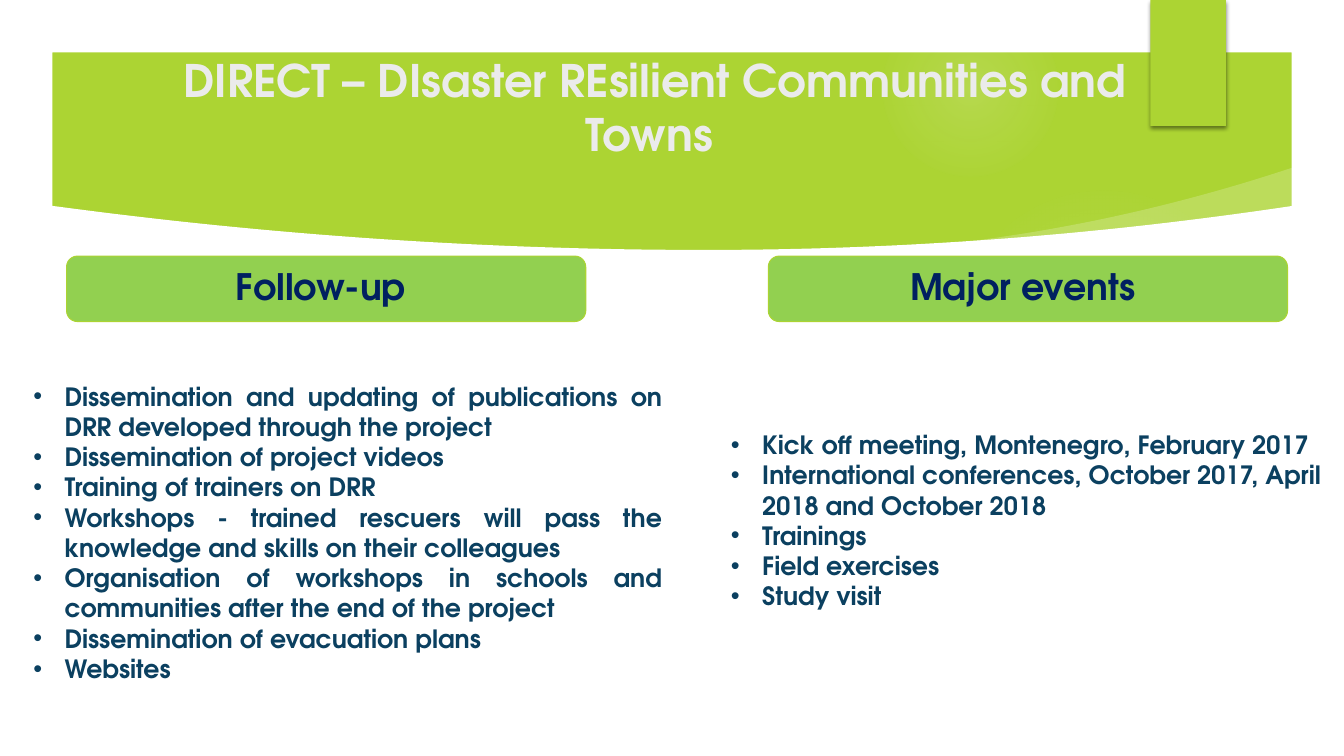
from lxml import etree
from pptx import Presentation
from pptx.dml.color import RGBColor
from pptx.enum import shapes, text
from pptx.oxml import parse_xml
from pptx.oxml.ns import nsdecls, qn
from pptx.util import Inches, Pt

FONT = "TeX Gyre Adventor"
LIME = RGBColor(0xAC, 0xD4, 0x33)
GREEN = RGBColor(0x92, 0xD0, 0x50)
NAVY = RGBColor(0x00, 0x20, 0x60)
TEAL = RGBColor(0x0B, 0x40, 0x60)
PALE = RGBColor(0xEB, 0xEB, 0xEB)
WHITE = RGBColor(0xFF, 0xFF, 0xFF)
GLOW = RGBColor(0xF7, 0xF7, 0xF7)

FOLLOW_UP = [
    "Dissemination and updating of publications on DRR developed through the project",
    "Dissemination of project videos",
    "Training of trainers on DRR",
    "Workshops - trained rescuers will pass the knowledge and skills on their colleagues",
    "Organisation of workshops in schools and communities after the end of the project",
    "Dissemination of evacuation plans",
    "Websites",
]
EVENTS = [
    "Kick off meeting, Montenegro, February 2017",
    "International conferences, October 2017, April 2018 and October 2018",
    "Trainings",
    "Field exercises",
    "Study visit",
]


def write(tf, lines, size, color, align=text.PP_ALIGN.LEFT, bullet=False,
          anchor=text.MSO_ANCHOR.TOP, spacing=1.0):
    """Fill a text frame with bold paragraphs."""
    tf.word_wrap = True
    tf.auto_size = text.MSO_AUTO_SIZE.NONE
    tf.vertical_anchor = anchor
    for i, line in enumerate(lines):
        p = tf.add_paragraph() if i else tf.paragraphs[0]
        if bullet:
            pPr = p._p.get_or_add_pPr()
            pPr.set("marL", str(Inches(0.31)))
            pPr.set("indent", str(-Inches(0.31)))
            etree.SubElement(pPr, qn("a:buFont")).set("typeface", "Arial")
            etree.SubElement(pPr, qn("a:buChar")).set("char", "•")
        p.alignment = align
        p.line_spacing = spacing
        p.space_before = p.space_after = Pt(0)
        r = p.add_run()
        r.text = line
        r.font.name, r.font.size, r.font.bold = FONT, Pt(size), True
        r.font.color.rgb = color


def paint(sp, color, line=None):
    """Give a shape a flat fill and an optional outline."""
    sp.shadow.inherit = False
    sp.fill.solid()
    sp.fill.fore_color.rgb = color
    if line is None:
        sp.line.fill.background()
    else:
        sp.line.color.rgb = line
        sp.line.width = Pt(0.75)


def add_shape(s, kind, box, color, line=None):
    sp = s.shapes.add_shape(kind, *map(Inches, box))
    paint(sp, color, line)
    return sp


def add_outline(s, points, color):
    points = [(Inches(x), Inches(y)) for x, y in points]
    builder = s.shapes.build_freeform(*points[0])
    builder.add_line_segments(points[1:], close=True)
    sp = builder.convert_to_shape()
    paint(sp, color)
    return sp


def add_glow(s, box, stops):
    """Add a circle that fades out; stops are (position %, opacity %)."""
    sp = add_shape(s, shapes.MSO_SHAPE.OVAL, box, GLOW)
    gs = "".join(
        f'<a:gs pos="{pos * 1000}"><a:srgbClr val="{GLOW}">'
        f'<a:alpha val="{alpha * 1000}"/></a:srgbClr></a:gs>'
        for pos, alpha in stops)
    grad = parse_xml(
        f'<a:gradFill {nsdecls("a")}><a:gsLst>{gs}</a:gsLst><a:path path="circle">'
        '<a:fillToRect l="50000" t="50000" r="50000" b="50000"/></a:path></a:gradFill>')
    spPr = sp._element.spPr
    spPr.replace(spPr.find(qn("a:solidFill")), grad)


def add_swoosh(s):
    """Add the translucent sweep at the right end of the banner."""
    steps = [i / 30 for i in range(31)]
    top = [(9.3 + 3.53 * t, 2.43 - 0.37 * t - 0.4 * t * t) for t in steps]
    sp = add_outline(s, top + [(12.89, 2.14), (9.34, 2.5)], WHITE)
    clr = sp._element.spPr.find(qn("a:solidFill"))[0]
    etree.SubElement(clr, qn("a:alpha")).set("val", "20000")


def add_wave(s):
    """Add the white page area whose top edge is a shallow curve."""
    left, right, low = 0.5, 12.84, 7.0
    curve = []
    for i in range(61):
        x = left + (right - left) * i / 60
        half = low - left if x < low else right - low
        curve.append((x, 2.48 - 0.44 * ((x - low) / half) ** 2))
    add_outline(s, curve + [(right, 7), (left, 7)], WHITE)


def add_tab(s):
    sp = add_shape(s, shapes.MSO_SHAPE.RECTANGLE, (11.41, 0, 0.75, 1.25), LIME)
    effects = sp._element.spPr.find(qn("a:effectLst"))
    effects.append(parse_xml(
        f'<a:outerShdw {nsdecls("a")} blurRad="{Pt(3)}" dist="{Pt(2)}" dir="5400000" '
        'rotWithShape="0"><a:srgbClr val="000000"><a:alpha val="45000"/></a:srgbClr>'
        '</a:outerShdw>'))


def add_heading(s, left, label):
    sp = add_shape(s, shapes.MSO_SHAPE.ROUNDED_RECTANGLE, (left, 2.54, 5.15, 0.65), GREEN, LIME)
    write(sp.text_frame, [label], 26, NAVY, text.PP_ALIGN.CENTER,
          anchor=text.MSO_ANCHOR.MIDDLE, spacing=0.9)


def fill_placeholder(s, ph, box, lines, size, color, **fmt):
    """Place a placeholder above the backdrop and write its text."""
    ph.left, ph.top, ph.width, ph.height = map(Inches, box)
    s.shapes._spTree.append(ph._element)
    write(ph.text_frame, lines, size, color, **fmt)


def main():
    prs = Presentation()
    prs.slide_width, prs.slide_height = Inches(13.33), Inches(7.5)
    s = prs.slides.add_slide(prs.slide_layouts[3])
    title, left_list, right_list = list(s.placeholders)[:3]

    # Backdrop
    s.background.fill.solid()
    s.background.fill.fore_color.rgb = LIME
    add_glow(s, (9.41, 1.83, 3.08, 3.08), [(0, 7), (36, 6), (69, 0)])
    add_glow(s, (8.75, 0, 1.75, 1.75), [(0, 14), (36, 7), (73, 0)])
    add_swoosh(s)
    add_wave(s)
    frame = add_shape(s, shapes.MSO_SHAPE.FRAME, (0, 0, 13.33, 7.5), WHITE)
    frame.adjustments[0] = 0.52 / 7.5
    add_tab(s)

    # Title
    fill_placeholder(s, title, (1.71, 0.67, 9.58, 0.77),
                     ["DIRECT – DIsaster REsilient Communities and Towns "], 32, PALE,
                     align=text.PP_ALIGN.CENTER, anchor=text.MSO_ANCHOR.MIDDLE)

    # Follow-up column
    add_heading(s, 0.66, "Follow-up ")
    fill_placeholder(s, left_list, (0.23, 3.73, 6.44, 3.43), FOLLOW_UP, 18, TEAL,
                     align=text.PP_ALIGN.JUSTIFY, bullet=True)

    # Major events column
    add_heading(s, 7.62, "Major events ")
    fill_placeholder(s, right_list, (7.15, 4.21, 6.18, 2.52), EVENTS, 18, TEAL, bullet=True)

    prs.save("out.pptx")


if __name__ == "__main__":
    main()
